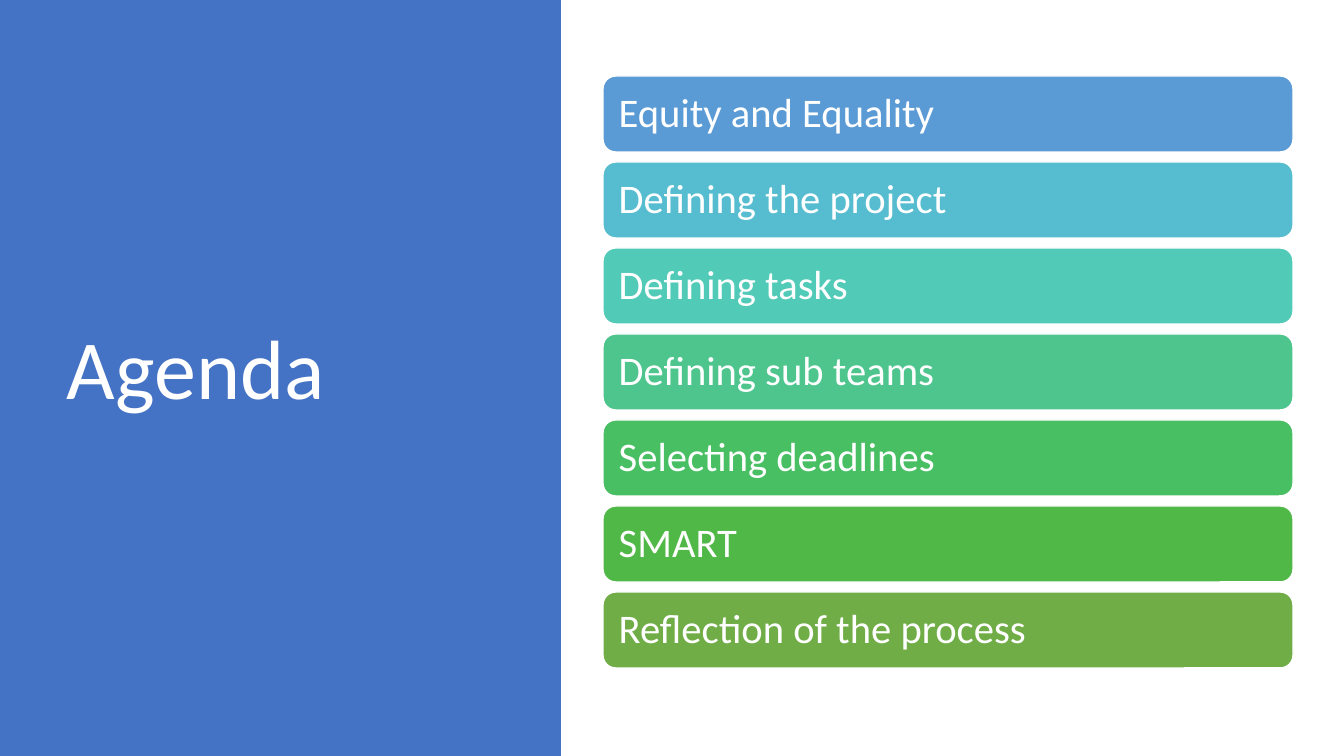
from pptx import Presentation
from pptx.dml.color import RGBColor
from pptx.enum.shapes import MSO_SHAPE
from pptx.enum.text import MSO_ANCHOR, PP_ALIGN
from pptx.util import Emu, Pt

RECTANGLE = MSO_SHAPE.RECTANGLE
ROUNDED = MSO_SHAPE.ROUNDED_RECTANGLE
MIDDLE = MSO_ANCHOR.MIDDLE
LEFT = PP_ALIGN.LEFT

WHITE = RGBColor(0xFF, 0xFF, 0xFF)
PANEL_BLUE = RGBColor(0x44, 0x72, 0xC4)
BLUE = RGBColor(0x5B, 0x9B, 0xD5)
CYAN = RGBColor(0x56, 0xBC, 0xD0)
TURQUOISE = RGBColor(0x52, 0xCA, 0xB8)
MINT = RGBColor(0x4D, 0xC5, 0x8D)
EMERALD = RGBColor(0x49, 0xBF, 0x64)
GREEN = RGBColor(0x50, 0xB8, 0x46)
OLIVE = RGBColor(0x70, 0xAD, 0x47)

FONT = "Calibri"
EMU_PER_PX = 914400 / 100.8
SLIDE_WIDTH, SLIDE_HEIGHT = 1344, 756

AGENDA = [
    ("Equity and Equality", BLUE),
    ("Defining the project", CYAN),
    ("Defining tasks", TURQUOISE),
    ("Defining sub teams", MINT),
    ("Selecting deadlines", EMERALD),
    ("SMART", GREEN),
    ("Reflection of the process", OLIVE),
]
BAR_LEFT, BAR_TOP = 603, 76
BAR_WIDTH, BAR_HEIGHT, BAR_STEP = 690, 76, 86


def px(length):
    return Emu(round(length * EMU_PER_PX))


def add_block(slide, kind, left, top, width, height, fill):
    shape = slide.shapes.add_shape(kind, px(left), px(top), px(width), px(height))
    shape.shadow.inherit = False
    shape.fill.solid()
    shape.fill.fore_color.rgb = fill
    shape.line.fill.background()
    return shape


def write_text(shape, text, size, inset):
    frame = shape.text_frame
    frame.word_wrap = True
    frame.vertical_anchor = MIDDLE
    frame.margin_left = frame.margin_right = px(inset)
    paragraph = frame.paragraphs[0]
    paragraph.alignment = LEFT
    paragraph.line_spacing = 0.9
    run = paragraph.add_run()
    run.text = text
    run.font.name = FONT
    run.font.size = Pt(size)
    run.font.color.rgb = WHITE


def add_title(slide, text):
    box = slide.shapes.add_textbox(px(57), px(69), px(419), px(607))
    write_text(box, text, size=60, inset=10)


def add_agenda_bar(slide, index, text, fill):
    top = BAR_TOP + index * BAR_STEP
    bar = add_block(slide, ROUNDED, BAR_LEFT, top, BAR_WIDTH, BAR_HEIGHT, fill)
    bar.line.color.rgb = WHITE
    bar.line.width = Pt(1)
    write_text(bar, text, size=29, inset=12)


def main():
    presentation = Presentation()
    presentation.slide_width = px(SLIDE_WIDTH)
    presentation.slide_height = px(SLIDE_HEIGHT)
    slide = presentation.slides.add_slide(presentation.slide_layouts[6])

    # Title panel
    add_block(slide, RECTANGLE, 0, 0, 561, SLIDE_HEIGHT, PANEL_BLUE)
    add_title(slide, "Agenda")

    # Agenda bars
    for index, (text, fill) in enumerate(AGENDA):
        add_agenda_bar(slide, index, text, fill)

    presentation.save("out.pptx")


if __name__ == "__main__":
    main()
